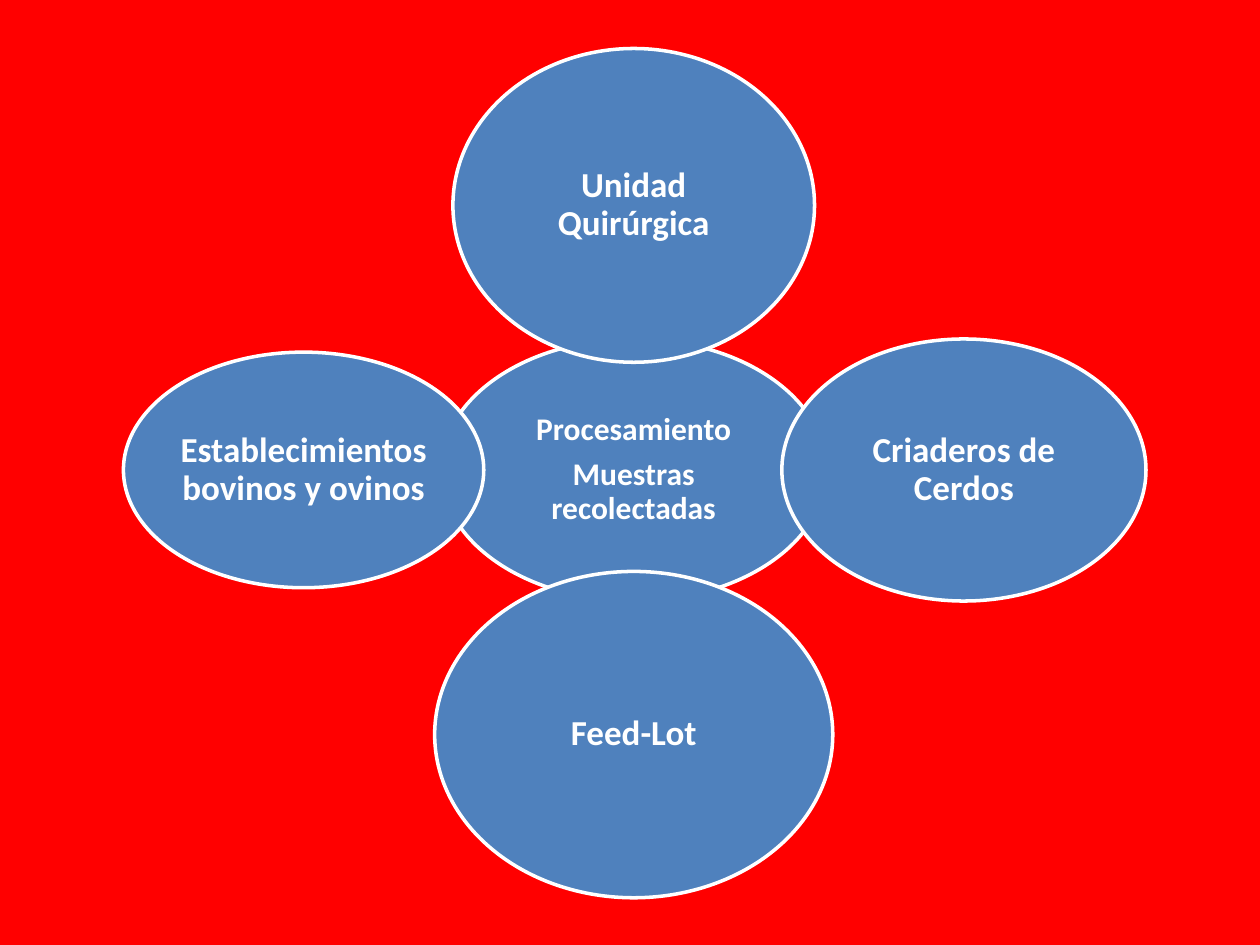
from pptx import Presentation
from pptx.dml.color import RGBColor
from pptx.enum import shapes, text
from pptx.util import Inches, Pt

RED = RGBColor(0xFF, 0x00, 0x00)
BLUE = RGBColor(0x4F, 0x81, 0xBD)
WHITE = RGBColor(0xFF, 0xFF, 0xFF)

HUB_X, HUB_Y = 5.03, 3.73
STEP_X, STEP_Y = 2.62, 2.1
INSET = Inches(0.01)

STAGES = [
    (0, 0, 3.06, 2.08, 18, ["Procesamiento", "Muestras recolectadas"]),
    (0, -1, 2.87, 2.49, 20, ["Unidad Quirúrgica"]),
    (1, 0, 2.89, 2.08, 20, ["Criaderos de Cerdos"]),
    (0, 1, 3.16, 2.59, 20, ["Feed-Lot"]),
    (-1, 0, 2.86, 1.87, 20, ["Establecimientos bovinos y ovinos"]),
]


def write_label(ellipse, lines, size):
    frame = ellipse.text_frame
    frame.word_wrap = True
    frame.vertical_anchor = text.MSO_ANCHOR.MIDDLE
    frame.margin_left = frame.margin_right = INSET
    frame.margin_top = frame.margin_bottom = INSET
    frame.text = "\n".join(lines)
    for index, paragraph in enumerate(frame.paragraphs):
        paragraph.alignment = text.PP_ALIGN.CENTER
        paragraph.line_spacing = 0.9
        if index:
            paragraph.space_before = Pt(round(0.35 * size, 1))
        for run in paragraph.runs:
            run.font.name = "Calibri"
            run.font.size = Pt(size)
            run.font.bold = True
            run.font.color.rgb = WHITE


def add_stage(slide, column, row, width, height, size, lines):
    left = HUB_X + column * STEP_X - width / 2
    top = HUB_Y + row * STEP_Y - height / 2
    ellipse = slide.shapes.add_shape(
        shapes.MSO_SHAPE.OVAL,
        Inches(left), Inches(top), Inches(width), Inches(height),
    )
    ellipse.shadow.inherit = False
    ellipse.fill.solid()
    ellipse.fill.fore_color.rgb = BLUE
    ellipse.line.color.rgb = WHITE
    ellipse.line.width = Pt(2)
    write_label(ellipse, lines, size)


def main():
    deck = Presentation()
    deck.slide_width, deck.slide_height = Inches(10), Inches(7.5)
    slide = deck.slides.add_slide(deck.slide_layouts[6])
    slide.background.fill.solid()
    slide.background.fill.fore_color.rgb = RED
    for stage in STAGES:
        add_stage(slide, *stage)
    deck.save("out.pptx")


if __name__ == "__main__":
    main()
